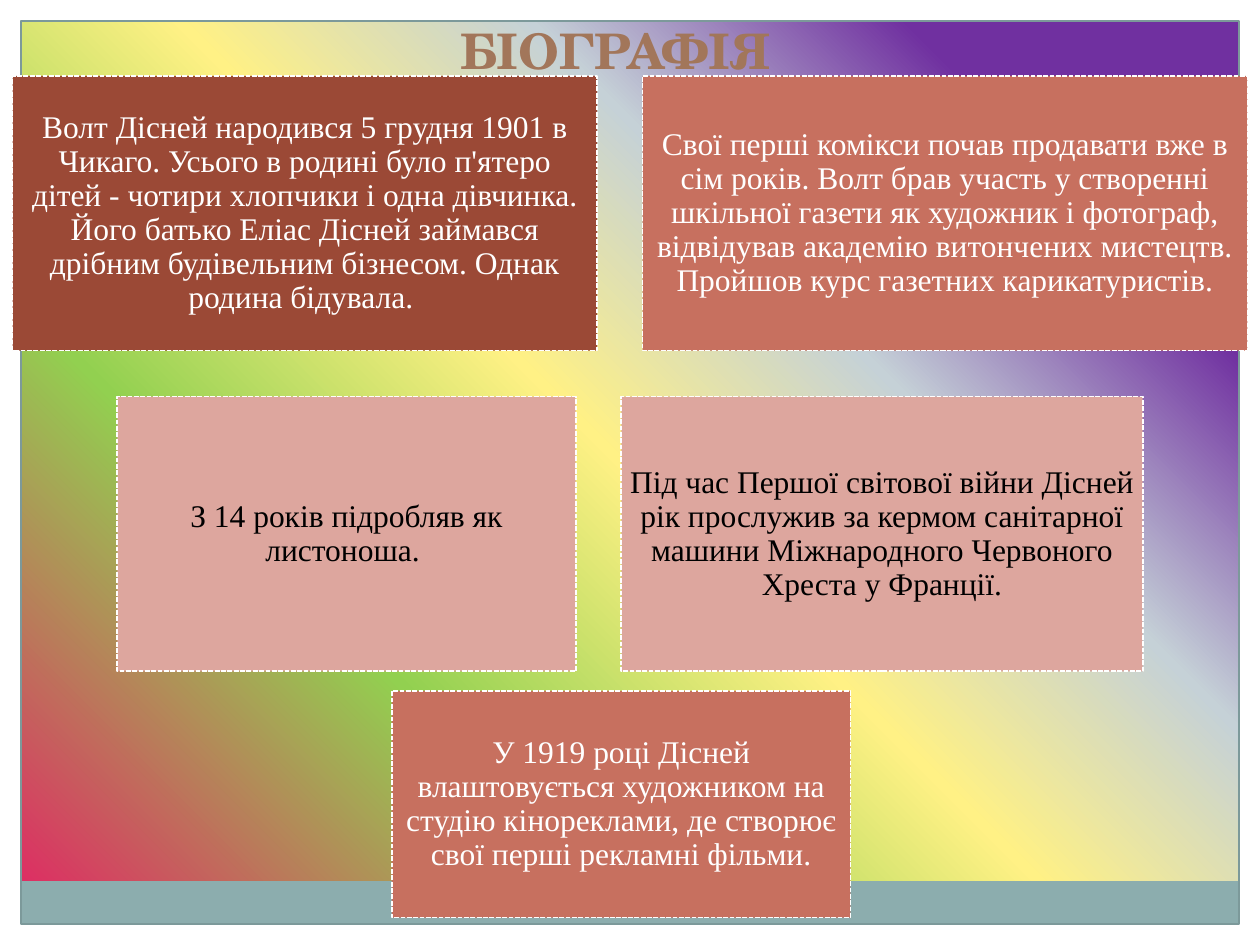
from copy import deepcopy

from pptx import Presentation
from pptx.dml.color import RGBColor
from pptx.enum import dml, shapes, text
from pptx.oxml import ns
from pptx.util import Pt

WHITE = RGBColor(0xFF, 0xFF, 0xFF)
BLACK = RGBColor(0, 0, 0)
BROWN = RGBColor(0xA2, 0x76, 0x5A)
TEAL = RGBColor(0x8C, 0xAD, 0xAE)
FRAME = RGBColor(0x7C, 0x99, 0x9A)
RUST = RGBColor(0x9B, 0x49, 0x36)
CORAL = RGBColor(0xC7, 0x70, 0x5F)
PINK = RGBColor(0xDD, 0xA6, 0x9E)

# Content
TITLE = "БІОГРАФІЯ"
# Rows of cards: top, height, centre, cards (width, fill, text colour, text)
ROWS = [
    (43.4, 157, 360, [
        (334, RUST, WHITE,
         "Волт Дісней народився 5 грудня 1901 в Чикаго. Усього в родині було "
         "п'ятеро дітей - чотири хлопчики і одна дівчинка. Його батько Еліас "
         "Дісней займався дрібним будівельним бізнесом. Однак родина бідувала. "),
        (345.6, CORAL, WHITE,
         "Свої перші комікси почав продавати вже в сім років. Волт брав участь "
         "у створенні шкільної газети як художник і фотограф, відвідував "
         "академію витончених мистецтв. Пройшов курс газетних карикатуристів."),
    ]),
    (226.6, 157, 360, [
        (262, PINK, BLACK, "З 14 років підробляв як листоноша. "),
        (298, PINK, BLACK,
         "Під час Першої світової війни Дісней рік прослужив за кермом "
         "санітарної машини Міжнародного Червоного Хреста у Франції."),
    ]),
    (394.8, 129.6, 355, [
        (262, CORAL, WHITE,
         "У 1919 році Дісней влаштовується художником на студію кінореклами, "
         "де створює свої перші рекламні фільми."),
    ]),
]
GAP = 26
BACKGROUND = [(0.17, "7030A0"), (0.34, "C5D1D7"), (0.5, "FFF185"),
              (0.7, "92D050"), (1, "E81766")]
EDGE = 12
BANDS = [
    (0, 528, 720, EDGE, WHITE),
    (0, 0, 720, EDGE, WHITE),
    (708, 0, EDGE, 540, WHITE),
    (0, 0, EDGE, 540, WHITE),
    (EDGE, 503.5, 696, 24.5, TEAL),
]


def add_rect(page, left, top, width, height, fill=None):
    box = page.shapes.add_shape(shapes.MSO_SHAPE.RECTANGLE,
                                Pt(left), Pt(top), Pt(width), Pt(height))
    box.shadow.inherit = False
    box.line.fill.background()
    if fill is None:
        box.fill.background()
    else:
        box.fill.solid()
        box.fill.fore_color.rgb = fill
    return box


def paint_background(page):
    fill = page.background.fill
    fill.gradient()
    fill.gradient_angle = 225
    stop_list = next(page.element.iter(ns.qn("a:gsLst")))
    first = stop_list[0]
    for extra in stop_list[1:]:
        stop_list.remove(extra)
    for _ in BACKGROUND[1:]:
        stop_list.append(deepcopy(first))
    for stop, (position, colour) in zip(fill.gradient_stops, BACKGROUND):
        stop.position = position
        stop.color.rgb = RGBColor.from_string(colour)


def add_card(page, left, top, width, height, fill, colour, words):
    box = add_rect(page, left, top, width, height, fill)
    box.line.color.rgb = WHITE
    box.line.width = Pt(0.9)
    box.line.dash_style = dml.MSO_LINE.SQUARE_DOT
    frame = box.text_frame
    frame.word_wrap = True
    frame.vertical_anchor = text.MSO_ANCHOR.MIDDLE
    frame.margin_left = frame.margin_right = Pt(5)
    frame.margin_top = frame.margin_bottom = Pt(5)
    frame.text = words
    para = frame.paragraphs[0]
    para.alignment = text.PP_ALIGN.CENTER
    para.line_spacing = 0.9
    font = para.runs[0].font
    font.name, font.size = "Times New Roman", Pt(18)
    font.color.rgb = colour


def main():
    deck = Presentation()
    deck.slide_width, deck.slide_height = Pt(720), Pt(540)
    page = deck.slides.add_slide(deck.slide_layouts[5])

    # Background, edges and frame
    paint_background(page)
    for band in BANDS:
        add_rect(page, *band)
    border = add_rect(page, EDGE, EDGE, 696, 516)
    border.line.color.rgb = FRAME
    border.line.width = Pt(0.75)

    # Title
    title = page.shapes.title
    title.left, title.top = Pt(173), Pt(8)
    title.width, title.height = Pt(357), Pt(41)
    frame = title.text_frame
    frame.text = TITLE
    frame.vertical_anchor = text.MSO_ANCHOR.TOP
    para = frame.paragraphs[0]
    para.alignment = text.PP_ALIGN.CENTER
    font = para.runs[0].font
    font.name, font.size, font.bold = "TeX Gyre Schola", Pt(28), True
    font.color.rgb = BROWN

    # Cards, each row centred
    for top, height, centre, cards in ROWS:
        total = sum(card[0] for card in cards) + GAP * (len(cards) - 1)
        left = centre - total / 2
        for width, fill, colour, words in cards:
            add_card(page, left, top, width, height, fill, colour, words)
            left += width + GAP

    deck.save("out.pptx")


if __name__ == "__main__":
    main()
